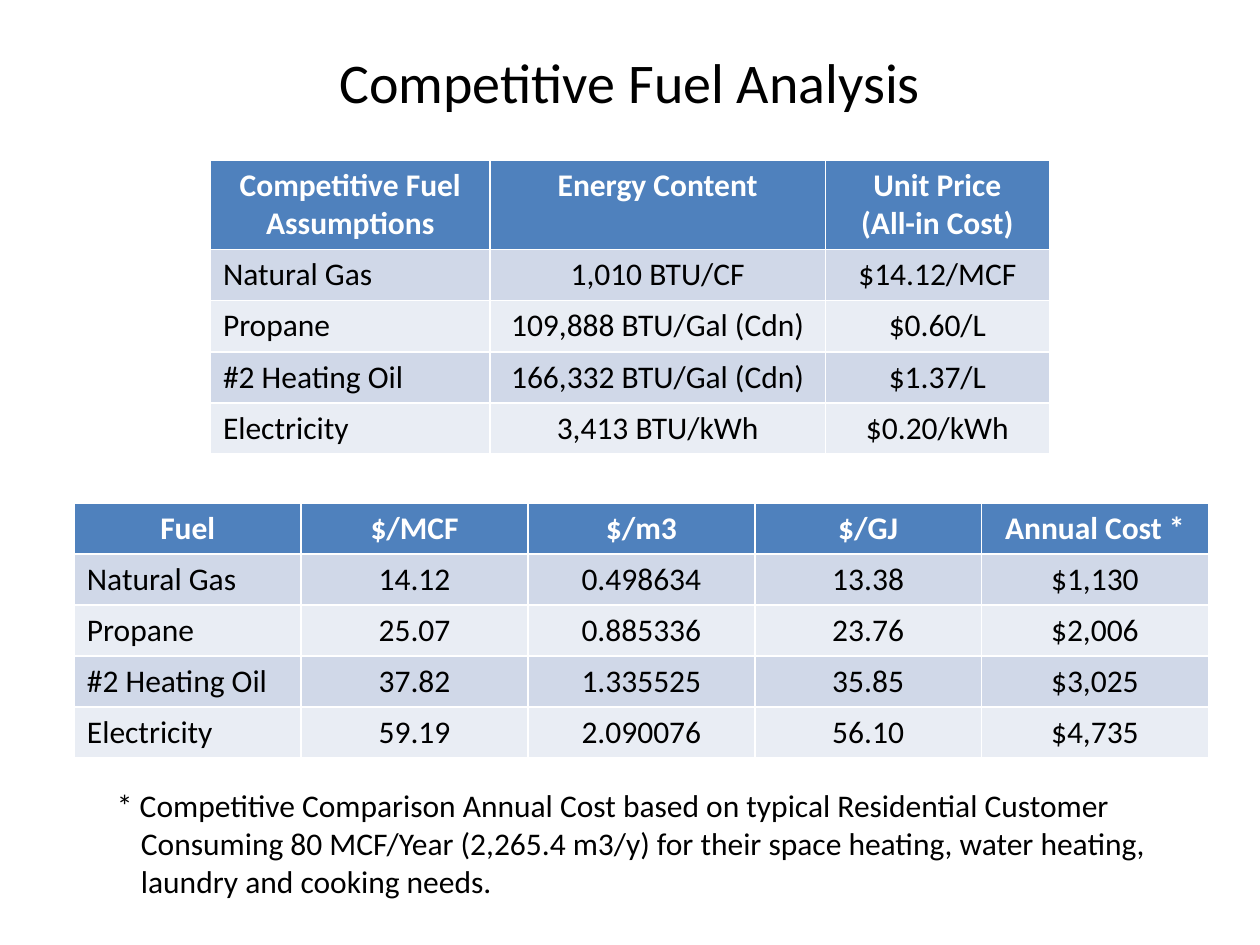
"""Build the competitive fuel analysis slide with its two tables."""
from pptx import Presentation, util as u
from pptx.dml.color import RGBColor
from pptx.enum import text

FUELS = ["Natural Gas", "Propane", "#2 Heating Oil", "Electricity"]
ASSUMPTIONS = [
    ("Competitive Fuel\nAssumptions", "Energy Content", "Unit Price\n(All-in Cost)"),
    ("1,010 BTU/CF", "$14.12/MCF"),
    ("109,888 BTU/Gal (Cdn)", "$0.60/L"),
    ("166,332 BTU/Gal (Cdn)", "$1.37/L"),
    ("3,413 BTU/kWh", "$0.20/kWh"),
]
COSTS = [
    ("Fuel", "$/MCF", "$/m3", "$/GJ", "Annual Cost *"),
    ("14.12", "0.498634", "13.38", "$1,130"),
    ("25.07", "0.885336", "23.76", "$2,006"),
    ("37.82", "1.335525", "35.85", "$3,025"),
    ("59.19", "2.090076", "56.10", "$4,735"),
]
FOOTNOTE = (
    "* Competitive Comparison Annual Cost based on typical Residential Customer "
    "Consuming 80 MCF/Year (2,265.4 m3/y) for their space heating, water heating, "
    "laundry and cooking needs."
)


def rgb(color):
    return RGBColor.from_string(color)


class Deck:
    font, size = "Calibri", 18
    ink, paper, header = "000000", "FFFFFF", "4F81BD"
    bands = ("D0D8E8", "E9EDF4")
    row_height = 0.405

    def __init__(self, s):
        self.s = s

    def add_text(self, tf, content, align, size=None, color=None, bold=False):
        for i, line in enumerate(content.split("\n")):
            p = tf.add_paragraph() if i else tf.paragraphs[0]
            p.alignment = align
            r = p.add_run()
            r.text = line
            r.font.name = self.font
            r.font.size = u.Pt(size or self.size)
            r.font.bold = bold
            r.font.color.rgb = rgb(color or self.ink)

    def title(self, content, box):
        sp = self.s.shapes.title
        sp.left, sp.top, sp.width, sp.height = map(u.Inches, box)
        sp.text_frame.vertical_anchor = text.MSO_ANCHOR.MIDDLE
        self.add_text(sp.text_frame, content, text.PP_ALIGN.CENTER, size=32)

    def table(self, rows, left, top, widths, header_height):
        header, *values = rows
        rows = [header] + [(fuel, *row) for fuel, row in zip(FUELS, values)]
        heights = [header_height] + [self.row_height] * len(FUELS)
        box = map(u.Inches, (left, top, sum(widths), sum(heights)))
        table = self.s.shapes.add_table(len(rows), len(widths), *box).table
        for column, width in zip(table.columns, widths):
            column.width = u.Inches(width)
        for i, (row, height) in enumerate(zip(rows, heights)):
            table.rows[i].height = u.Inches(height)
            for j, content in enumerate(row):
                self.cell(table.cell(i, j), content, i, j)

    def cell(self, cell, content, i, j):
        is_header = i == 0
        cell.fill.solid()
        cell.fill.fore_color.rgb = rgb(self.header if is_header else self.bands[(i - 1) % 2])
        is_label = j == 0 and not is_header
        align = text.PP_ALIGN.LEFT if is_label else text.PP_ALIGN.CENTER
        color = self.paper if is_header else self.ink
        self.add_text(cell.text_frame, content, align, color=color, bold=is_header)

    def footnote(self, content, box, indent):
        tf = self.s.shapes.add_textbox(*map(u.Inches, box)).text_frame
        tf.word_wrap = True
        self.add_text(tf, content, text.PP_ALIGN.LEFT)
        pPr = tf.paragraphs[0]._p.get_or_add_pPr()
        pPr.set("marL", str(u.Inches(indent)))
        pPr.set("indent", str(-u.Inches(indent)))


def main():
    prs = Presentation()
    prs.slide_width, prs.slide_height = u.Inches(10), u.Inches(7.5)
    deck = Deck(prs.slides.add_slide(prs.slide_layouts[5]))
    deck.title("Competitive Fuel Analysis", (0.5, 0.02, 9, 1.25))
    deck.table(COSTS, 0.59, 3.99, [1.8] * 5, deck.row_height)
    deck.table(ASSUMPTIONS, 1.67, 1.27, [2.22, 2.66, 1.78], 0.7)
    deck.footnote(FOOTNOTE, (0.83, 6.19, 8.98, 1.31), 0.19)
    prs.save("out.pptx")


if __name__ == "__main__":
    main()
